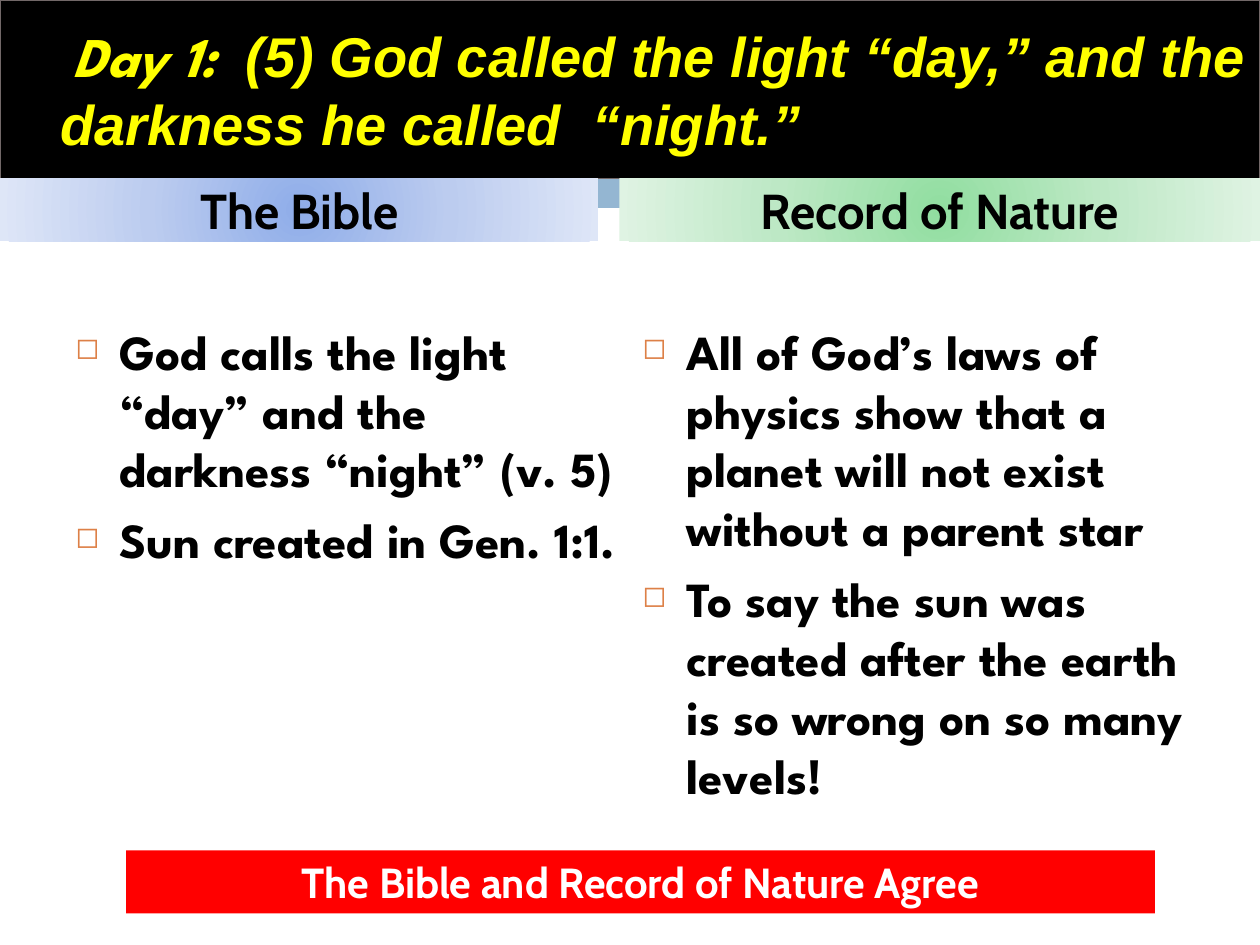
from typing import NamedTuple

from lxml.etree import SubElement
from pptx import Presentation
from pptx.dml.color import RGBColor
from pptx.enum.shapes import MSO_SHAPE as Preset
from pptx.enum.text import MSO_ANCHOR as Anchor, PP_ALIGN as Align
from pptx.oxml import parse_xml
from pptx.oxml.ns import nsdecls, qn
from pptx.util import Inches, Pt

COLUMNS, ROWS = 120, 90
COLORS = {
    "orange": "DD8047", "blue": "94B6D2", "black": "000000", "edge": "726868",
    "yellow": "FFFF00", "red": "FF0000", "white": "FFFFFF",
}
BLUE_GLOW = ("8FADE9", "BCCCEF", "DEE6F7")
GREEN_GLOW = ("91DEA0", "BDE8C5", "DFF3E3")


class Area(NamedTuple):
    column: float
    row: float
    columns: float
    rows: float


class Topic(NamedTuple):
    heading: str
    header: Area
    glow: tuple[str, str, str]
    body: Area
    points: tuple[str, ...]


TOPICS = (
    Topic("The Bible", Area(0, 17, 57, 6), BLUE_GLOW, Area(6, 30, 54, 56),
          ("God calls the light “day” and the darkness “night” (v. 5)",
           "Sun created in Gen. 1:1.")),
    Topic("Record of Nature", Area(59, 17, 61, 6), GREEN_GLOW, Area(60, 30, 55, 50),
          ("All of God’s laws of physics show that a planet will not exist "
           "without a parent star",
           "To say the sun was created after the earth is so wrong on so many levels!")),
)

deck = Presentation()
deck.slide_width, deck.slide_height = Inches(10), Inches(7.5)
page = deck.slides.add_slide(deck.slide_layouts[6])


def place(area: Area) -> tuple[int, int, int, int]:
    across, down = deck.slide_width / COLUMNS, deck.slide_height / ROWS
    return (round(area.column * across), round(area.row * down),
            round(area.columns * across), round(area.rows * down))


def color(name: str) -> RGBColor:
    return RGBColor.from_string(COLORS[name])


def add_block(area: Area, fill: str | None = None):
    block = page.shapes.add_shape(Preset.RECTANGLE, *place(area))
    block.shadow.inherit = False
    block.line.fill.background()
    if fill:
        block.fill.solid()
        block.fill.fore_color.rgb = color(fill)
    block.text_frame.word_wrap = True
    return block


def style(span, font: str, size: int, ink: str, italic: bool = False) -> None:
    span.font.name, span.font.size = font, Pt(size)
    span.font.bold, span.font.italic = True, italic
    span.font.color.rgb = color(ink)


def add_caption(block, text: str, size: int, ink: str, anchor: Anchor, before: float) -> None:
    frame = block.text_frame
    frame.text = text
    frame.vertical_anchor = anchor
    para = frame.paragraphs[0]
    para.alignment = Align.CENTER
    para.space_before = Pt(before)
    style(para.runs[0], "Cabin", size, ink)


def add_glow(block, shades: tuple[str, str, str]) -> None:
    stops = "".join(
        f'<a:gs pos="{index * 50000}"><a:srgbClr val="{shade}"/></a:gs>'
        for index, shade in enumerate(shades))
    gradient = parse_xml(
        f'<a:gradFill {nsdecls("a")} rotWithShape="1"><a:gsLst>{stops}</a:gsLst>'
        '<a:path path="circle"><a:fillToRect l="50000" t="50000" r="50000" b="50000"/>'
        '</a:path></a:gradFill>')
    block.element.spPr.find(qn("a:prstGeom")).addnext(gradient)


def add_bullet(para) -> None:
    props = para._p.get_or_add_pPr()
    props.set("marL", str(Inches(0.35)))
    props.set("indent", str(Inches(-0.35)))
    tint = SubElement(props, qn("a:buClr"))
    SubElement(tint, qn("a:srgbClr"), val=COLORS["orange"])
    SubElement(props, qn("a:buSzPct"), val="60000")
    SubElement(props, qn("a:buChar"), char="◻")


def add_points(area: Area, points: tuple[str, ...]) -> None:
    frame = page.shapes.add_textbox(*place(area)).text_frame
    frame.word_wrap = True
    frame.text = "\n".join(points)
    for para in frame.paragraphs:
        para.space_before = Pt(7)
        add_bullet(para)
        style(para.runs[0], "League Spartan", 28, "black")


def add_title() -> None:
    block = add_block(Area(0, 0, COLUMNS, 17), "black")
    block.line.color.rgb = color("edge")
    block.line.width = Pt(0.75)
    frame = block.text_frame
    frame.vertical_anchor = Anchor.MIDDLE
    frame.margin_right = 0
    para = frame.paragraphs[0]
    para.alignment = Align.LEFT
    props = para._p.get_or_add_pPr()
    props.set("marL", str(Inches(0.38)))
    props.set("indent", str(Inches(0.1)))
    for text, font in (
        ("Day 1:  ", "League Spartan"),
        ("(5) God called the light “day,” and the darkness he called  “night.”", "Arial"),
    ):
        span = para.add_run()
        span.text = text
        style(span, font, 32, "yellow", italic=True)


add_block(Area(0, 16.8, 7, 3), "orange")
add_block(Area(7.8, 16.8, 112.2, 3), "blue")
add_title()
for topic in TOPICS:
    add_points(topic.body, topic.points)
    header = add_block(topic.header)
    add_glow(header, topic.glow)
    add_caption(header, topic.heading, 28, "black", Anchor.MIDDLE, 7)
verdict = add_block(Area(12, 81, 98, 6), "red")
add_caption(verdict, "The Bible and Record of Nature Agree", 24, "white", Anchor.BOTTOM, 4.8)

deck.save("out.pptx")
